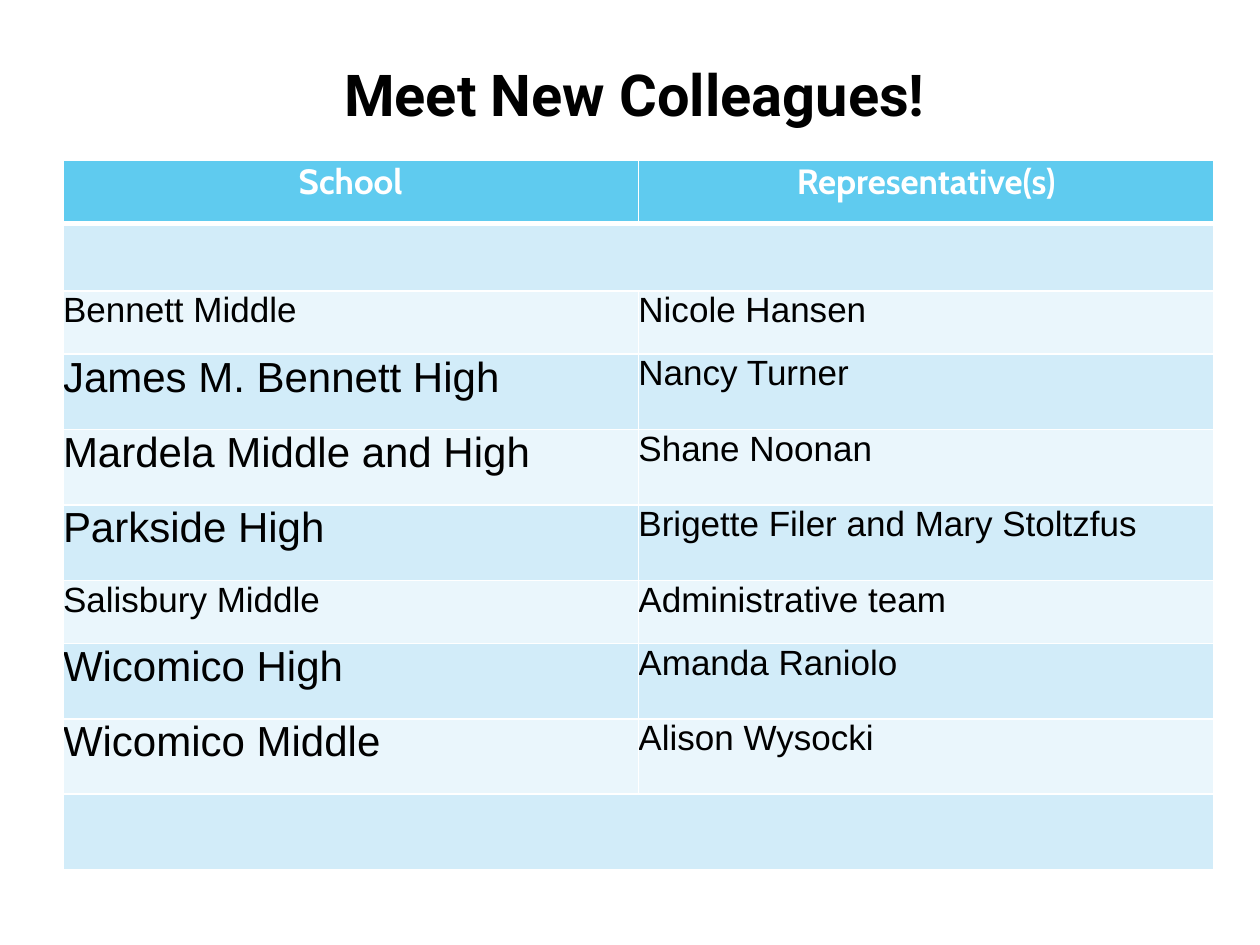
from pptx import Presentation
from pptx.dml.color import RGBColor as Rgb
from pptx.enum.text import MSO_ANCHOR as Anchor, PP_ALIGN as Align
from pptx.oxml.ns import qn
from pptx.util import Cm, Pt
from lxml.etree import SubElement

COLOURS = {
    "white": "FFFFFF",
    "black": "000000",
    "header": "5FCBEF",
    "dark band": "D2ECF9",
    "light band": "EAF6FC",
}
SHORT, TALL, SPACER = 1.27, 1.52, 1.37
HEADINGS = ("School", "Representative(s)")
COLLEAGUES = [
    ("Bennett Middle", "Nicole Hansen", 20),
    ("James M. Bennett High", "Nancy Turner", 24),
    ("Mardela Middle and High", "Shane Noonan", 24),
    ("Parkside High", "Brigette Filer and Mary Stoltzfus", 24),
    ("Salisbury Middle", "Administrative team", 20),
    ("Wicomico High", "Amanda Raniolo", 24),
    ("Wicomico Middle", "Alison Wysocki", 24),
]


def write(frame, text, font="Arial", size=20, colour="black", bold=False, align=Align.LEFT):
    """Put one formatted line of text into a text frame."""
    para = frame.paragraphs[0]
    para.alignment = align
    span = para.add_run()
    span.text = text
    span.font.name = font
    span.font.size = Pt(size)
    span.font.bold = bold
    span.font.color.rgb = Rgb.from_string(COLOURS[colour])


class Builder:
    """Holds the style and the current page."""

    def __init__(self, page):
        self.page = page
        self.heading = {"bold": True, "align": Align.CENTER}

    def title(self, text, left, top, width, height):
        """Add the centred page title."""
        box = self.page.shapes.add_textbox(Cm(left), Cm(top), Cm(width), Cm(height))
        box.text_frame.word_wrap = True
        box.text_frame.vertical_anchor = Anchor.TOP
        write(box.text_frame, text, font="Roboto", size=33, **self.heading)

    def border(self, cell, top=1, bottom=1):
        """Draw white lines around a cell, with widths in points."""
        properties = cell._tc.get_or_add_tcPr()
        for side, width in (("L", 1), ("R", 1), ("T", top), ("B", bottom)):
            line = SubElement(properties, qn(f"a:ln{side}"), w=str(Pt(width)))
            fill = SubElement(line, qn("a:solidFill"))
            SubElement(fill, qn("a:srgbClr"), val=COLOURS["white"])

    def cell(self, cell, fill, top=1, bottom=1):
        """Style a cell with its fill, borders and no margins."""
        self.border(cell, top, bottom)
        cell.fill.solid()
        cell.fill.fore_color.rgb = Rgb.from_string(COLOURS[fill])
        cell.margin_left = cell.margin_right = cell.margin_top = cell.margin_bottom = 0

    def table(self, left, top, width):
        """Add the table of schools and their representatives."""
        heights = [SHORT, SPACER]
        heights += [TALL if size == 24 else SHORT for *_, size in COLLEAGUES] + [TALL]
        last = len(heights) - 1
        table = self.page.shapes.add_table(
            len(heights), 2, Cm(left), Cm(top), Cm(width), Cm(sum(heights))
        ).table
        for column in table.columns:
            column.width = Cm(width / 2)
        for index, height in enumerate(heights):
            table.rows[index].height = Cm(height)
            band = "dark band" if index % 2 else "light band"
            for cell in table.rows[index].cells:
                self.cell(
                    cell,
                    band if index else "header",
                    top=3 if index == 1 else 1,
                    bottom=1 if index else 3,
                )
        for index in (1, last):
            table.cell(index, 0).merge(table.cell(index, 1))
        for column, text in enumerate(HEADINGS):
            frame = table.cell(0, column).text_frame
            write(frame, text, font="Cabin", colour="white", **self.heading)
        for index, (school, person, size) in enumerate(COLLEAGUES, 2):
            write(table.cell(index, 0).text_frame, school, size=size)
            write(table.cell(index, 1).text_frame, person)


def main():
    """Build the deck and save it."""
    deck = Presentation()
    deck.slide_width, deck.slide_height = Cm(25.4), Cm(19.05)
    builder = Builder(deck.slides.add_slide(deck.slide_layouts[6]))
    builder.title("Meet New Colleagues!", 1.57, 1.07, 22.45, 2.18)
    builder.table(1.27, 3.23, 23.2)
    deck.save("out.pptx")


if __name__ == "__main__":
    main()
